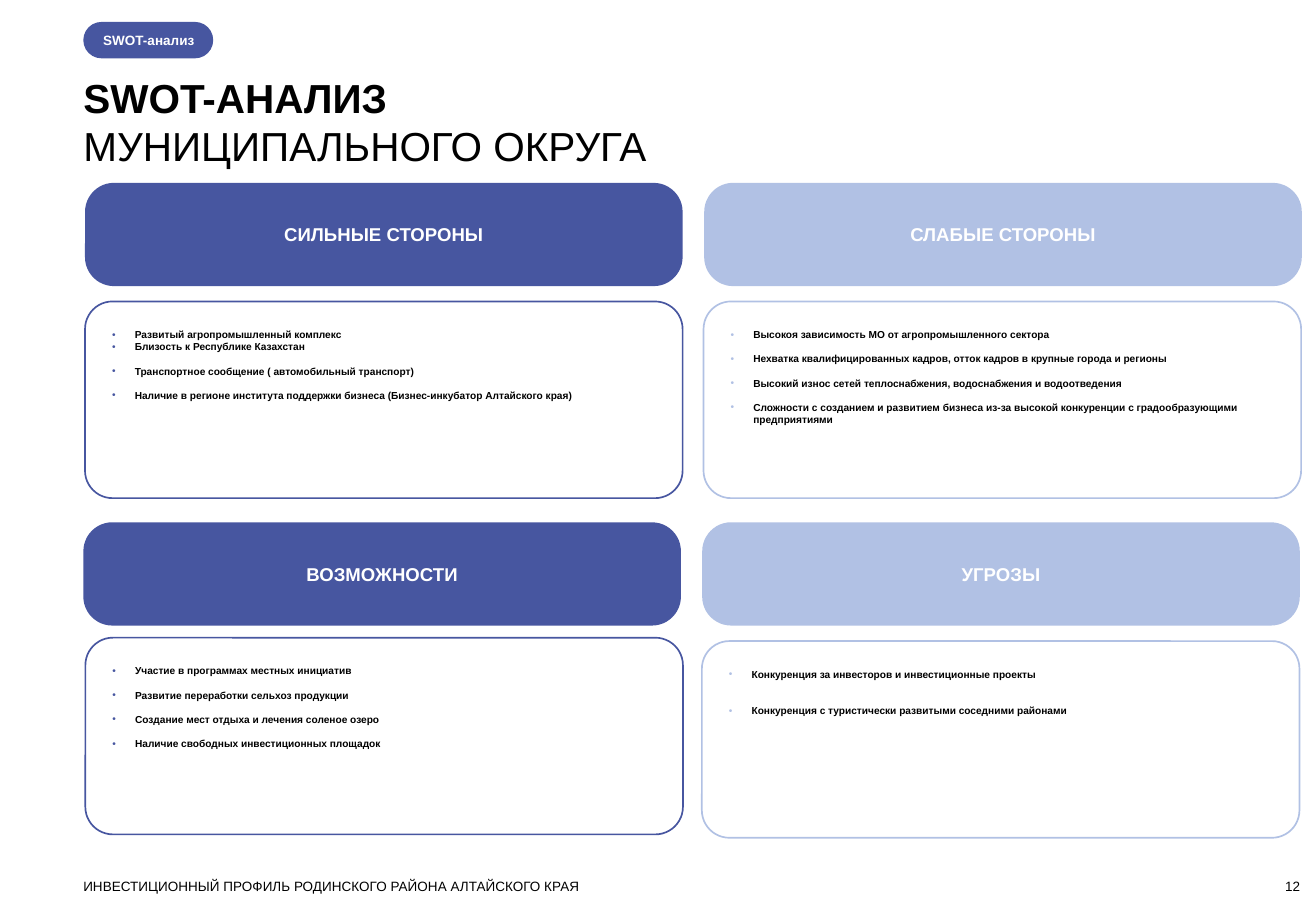
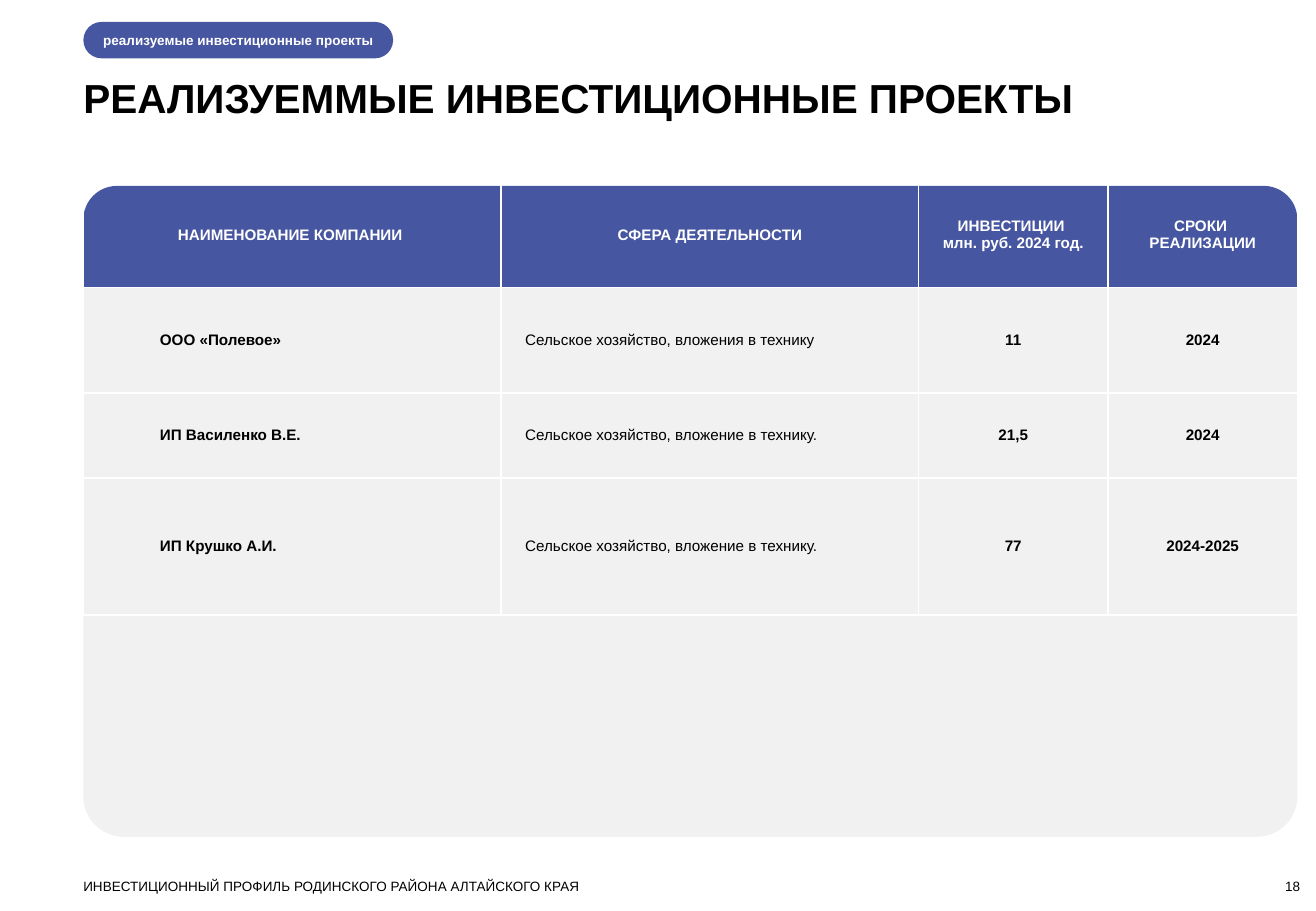
"""Build the SWOT and investment project slides of a district profile."""
from dataclasses import dataclass

from lxml import etree
from pptx import Presentation
from pptx.dml.color import RGBColor
from pptx.enum.shapes import MSO_SHAPE
from pptx.enum.text import MSO_ANCHOR, MSO_AUTO_SIZE, PP_ALIGN
from pptx.oxml.ns import qn
from pptx.util import Pt

ROUND = MSO_SHAPE.ROUNDED_RECTANGLE
TOP, MIDDLE, BOTTOM = MSO_ANCHOR.TOP, MSO_ANCHOR.MIDDLE, MSO_ANCHOR.BOTTOM
LEFT, CENTER, RIGHT = PP_ALIGN.LEFT, PP_ALIGN.CENTER, PP_ALIGN.RIGHT
FIT_NONE = MSO_AUTO_SIZE.NONE
COMPARISON, TITLE_ONLY = 4, 5


@dataclass(frozen=True)
class Theme:
    """Colours, font and type sizes."""
    font: str = "Arial"
    dark: str = "4756A0"
    light: str = "B1C1E4"
    panel: str = "F1F1F1"
    white: str = "FFFFFF"
    black: str = "000000"
    title: float = 24
    heading: float = 11
    table: float = 9
    small: float = 8
    bullet: float = 6


T = Theme()
MARGIN = 49.4
FOOTER = "ИНВЕСТИЦИОННЫЙ ПРОФИЛЬ РОДИНСКОГО РАЙОНА АЛТАЙСКОГО КРАЯ"

SWOT = {
    "tag": "SWOT-анализ", "tag_width": 77, "number": "12",
    "title": [("SWOT-АНАЛИЗ", True), ("МУНИЦИПАЛЬНОГО ОКРУГА", False)],
}
CARD_W, HEAD_H, BODY_H, CARD_PAD = 354.2, 61.2, 116.6, 16
BLANK_LINE, BULLET_INDENT = 7.2, 13.5
QUADRANTS = [
    {"head": "СИЛЬНЫЕ СТОРОНЫ", "color": T.dark,
     "head_at": (50.4, 108.4), "body_at": (50.4, 178.7),
     "items": [("Развитый агропромышленный комплекс", 0),
               ("Близость к Республике Казахстан", 0),
               ("Транспортное сообщение ( автомобильный транспорт)", 1),
               ("Наличие в регионе института поддержки бизнеса "
                "(Бизнес-инкубатор Алтайского края)", 1)]},
    {"head": "СЛАБЫЕ СТОРОНЫ", "color": T.light,
     "head_at": (417.4, 108.4), "body_at": (417, 178.7),
     "items": [("Высокоя зависимость МО от агропромышленного сектора", 0),
               ("Нехватка квалифицированных кадров, отток кадров "
                "в крупные города и регионы", 1),
               ("Высокий износ сетей теплоснабжения, водоснабжения и водоотведения", 1),
               ("Сложности с созданием и развитием бизнеса из-за высокой "
                "конкуренции с градообразующими предприятиями", 1)]},
    {"head": "ВОЗМОЖНОСТИ", "color": T.dark,
     "head_at": (49.4, 309.6), "body_at": (50.6, 378),
     "items": [("Участие в программах местных инициатив", 0),
               ("Развитие переработки сельхоз продукции", 1),
               ("Создание мест отдыха и лечения соленое озеро", 1),
               ("Наличие свободных инвестиционных площадок", 1)]},
    {"head": "УГРОЗЫ", "color": T.light,
     "head_at": (416.2, 309.6), "body_at": (416, 380),
     "items": [("Конкуренция за инвесторов и инвестиционные проекты", 0),
               ("Конкуренция с туристически развитыми соседними районами", 2)]},
]

PROJECTS = {
    "tag": "реализуемые инвестиционные проекты", "tag_width": 183.6, "number": "18",
    "title": [("РЕАЛИЗУЕММЫЕ ИНВЕСТИЦИОННЫЕ ПРОЕКТЫ", True)],
}
ROWS = [
    ("НАИМЕНОВАНИЕ КОМПАНИИ ", "СФЕРА ДЕЯТЕЛЬНОСТИ",
     "ИНВЕСТИЦИИ \nмлн. руб. 2024 год.", "СРОКИ \nРЕАЛИЗАЦИИ"),
    ("ООО «Полевое»", "Сельское хозяйство, вложения в технику", "11", "2024"),
    ("ИП Василенко В.Е.", "Сельское хозяйство, вложение в технику.", "21,5", "2024"),
    ("ИП Крушко А.И.", "Сельское хозяйство, вложение в технику.", "77", "2024-2025"),
]
ROW_HEIGHTS = (61.9, 62.6, 50.4, 81.4)
COLUMNS = [
    {"width": 247.5, "indent": 45.4, "align": LEFT, "bold": True},
    {"width": 247.5, "indent": 14.4, "align": LEFT, "bold": False},
    {"width": 112.3, "indent": 0, "align": CENTER, "bold": True},
    {"width": 112.3, "indent": 0, "align": CENTER, "bold": True},
]


def rgb(color):
    """Turn a hex string into a colour."""
    return RGBColor.from_string(color)


def format_paragraph(p, size, color=T.black, bold=False, align=LEFT):
    """Set the alignment and the font of every run."""
    p.alignment = align
    for r in p.runs:
        r.font.name, r.font.size, r.font.bold = T.font, Pt(size), bold
        r.font.color.rgb = rgb(color)


def set_frame(tf, anchor=TOP, left=0):
    """Make a wrapping frame without automatic sizing or other insets."""
    tf.word_wrap, tf.auto_size, tf.vertical_anchor = True, FIT_NONE, anchor
    tf.margin_left = Pt(left)
    tf.margin_top = tf.margin_right = tf.margin_bottom = 0


def place(sp, x, y, w, h):
    """Move and size a shape."""
    sp.left, sp.top, sp.width, sp.height = Pt(x), Pt(y), Pt(w), Pt(h)


def add_round(slide, box, radius, fill=None, line=None):
    """Add a rounded rectangle, filled or outlined."""
    sp = slide.shapes.add_shape(ROUND, *map(Pt, box))
    sp.adjustments[0] = radius
    sp.shadow.inherit = False
    if fill:
        sp.fill.solid()
        sp.fill.fore_color.rgb = rgb(fill)
    else:
        sp.fill.background()
    if line:
        sp.line.color.rgb = rgb(line)
        sp.line.width = Pt(1)
    else:
        sp.line.fill.background()
    return sp


def add_label(slide, text, box, anchor, align):
    """Add a small text box."""
    tf = slide.shapes.add_textbox(*map(Pt, box)).text_frame
    set_frame(tf, anchor)
    tf.text = text
    format_paragraph(tf.paragraphs[0], T.small, align=align)


def add_slide(prs, layout, page):
    """Add a slide with its tag, title, footer and number."""
    slide = prs.slides.add_slide(prs.slide_layouts[layout])
    title = slide.shapes.title
    place(title, MARGIN, 43.2, 721.4, 29 * len(page["title"]))
    tf = title.text_frame
    set_frame(tf)
    tf.text = "\n".join(text for text, _ in page["title"])
    for p, (_, bold) in zip(tf.paragraphs, page["title"]):
        p.line_spacing = 1.0
        format_paragraph(p, T.title, bold=bold)

    tag = add_round(slide, (MARGIN, 13, page["tag_width"], 21.6), 0.5, T.dark)
    set_frame(tag.text_frame, MIDDLE, 8.6)
    tag.text_frame.text = page["tag"]
    format_paragraph(tag.text_frame.paragraphs[0], T.small, T.white, True)

    add_label(slide, FOOTER, (MARGIN, 520.6, 576, 9.4), TOP, LEFT)
    add_label(slide, page["number"], (713, 520.6, 57.6, 9.4), BOTTOM, RIGHT)
    return slide


def add_bullet(p, color):
    """Give a paragraph a coloured bullet and a hanging indent."""
    pPr = p._p.get_or_add_pPr()
    pPr.set("marL", str(Pt(BULLET_INDENT)))
    pPr.set("indent", str(-Pt(BULLET_INDENT)))
    clr = etree.SubElement(pPr, qn("a:buClr"))
    etree.SubElement(clr, qn("a:srgbClr"), val=color)
    etree.SubElement(pPr, qn("a:buFont"), typeface=T.font)
    etree.SubElement(pPr, qn("a:buChar"), char="•")


def add_quadrant(slide, body, card):
    """Add a heading card and an outlined list below it."""
    head = add_round(slide, (*card["head_at"], CARD_W, HEAD_H), 0.28, card["color"])
    set_frame(head.text_frame, MIDDLE)
    head.text_frame.text = card["head"]
    format_paragraph(head.text_frame.paragraphs[0], T.heading, T.white, True, CENTER)

    x, y = card["body_at"]
    add_round(slide, (x, y, CARD_W, BODY_H), 0.14, line=card["color"])
    place(body, x + CARD_PAD, y + CARD_PAD, CARD_W - 2 * CARD_PAD, BODY_H - 2 * CARD_PAD)
    tf = body.text_frame
    set_frame(tf)
    tf.text = "\n".join(text for text, _ in card["items"])
    for p, (_, gap) in zip(tf.paragraphs, card["items"]):
        p.line_spacing = 1.0
        p.space_before, p.space_after = Pt(gap * BLANK_LINE), Pt(0)
        format_paragraph(p, T.bullet, bold=True)
        add_bullet(p, card["color"])


def add_borders(cell):
    """Draw thin white lines on all four sides of a cell."""
    tcPr = cell._tc.get_or_add_tcPr()
    for i, side in enumerate(("lnL", "lnR", "lnT", "lnB")):
        ln = etree.Element(qn("a:" + side), w=str(Pt(1)))
        fill = etree.SubElement(ln, qn("a:solidFill"))
        etree.SubElement(fill, qn("a:srgbClr"), val=T.white)
        tcPr.insert(i, ln)


def fill_cell(cell, text, column, is_head):
    """Write and format one table cell."""
    cell.vertical_anchor = MIDDLE
    cell.margin_left = Pt(0 if is_head else column["indent"])
    cell.margin_right = 0
    cell.margin_top = cell.margin_bottom = Pt(17.3 if is_head else 0)
    if is_head:
        cell.fill.background()
    else:
        cell.fill.solid()
        cell.fill.fore_color.rgb = rgb(T.panel)
    add_borders(cell)
    cell.text_frame.text = text
    for p in cell.text_frame.paragraphs:
        if is_head:
            format_paragraph(p, T.table, T.white, True, CENTER)
        else:
            format_paragraph(p, T.table, bold=column["bold"], align=column["align"])


def add_projects(slide):
    """Add the project table on its rounded backing."""
    width = sum(column["width"] for column in COLUMNS)
    add_round(slide, (MARGIN, 154, width, 342), 0.07, T.panel)
    add_round(slide, (MARGIN, 110.2, width, 90.7), 0.22, T.dark)
    box = (MARGIN, 108.4, width, sum(ROW_HEIGHTS))
    table = slide.shapes.add_table(len(ROWS), len(COLUMNS), *map(Pt, box)).table
    table.first_row = table.horz_banding = False
    for i, column in enumerate(COLUMNS):
        table.columns[i].width = Pt(column["width"])
    for i, (row, height) in enumerate(zip(ROWS, ROW_HEIGHTS)):
        table.rows[i].height = Pt(height)
        for j, (text, column) in enumerate(zip(row, COLUMNS)):
            fill_cell(table.cell(i, j), text, column, i == 0)


def main():
    """Build and save the slides."""
    prs = Presentation()
    prs.slide_width, prs.slide_height = Pt(780), Pt(540)
    swot = add_slide(prs, COMPARISON, SWOT)
    bodies = [sp for sp in swot.placeholders if sp.placeholder_format.idx > 0]
    for body, card in zip(bodies, QUADRANTS):
        add_quadrant(swot, body, card)
    add_projects(add_slide(prs, TITLE_ONLY, PROJECTS))
    prs.save("out.pptx")


if __name__ == "__main__":
    main()
